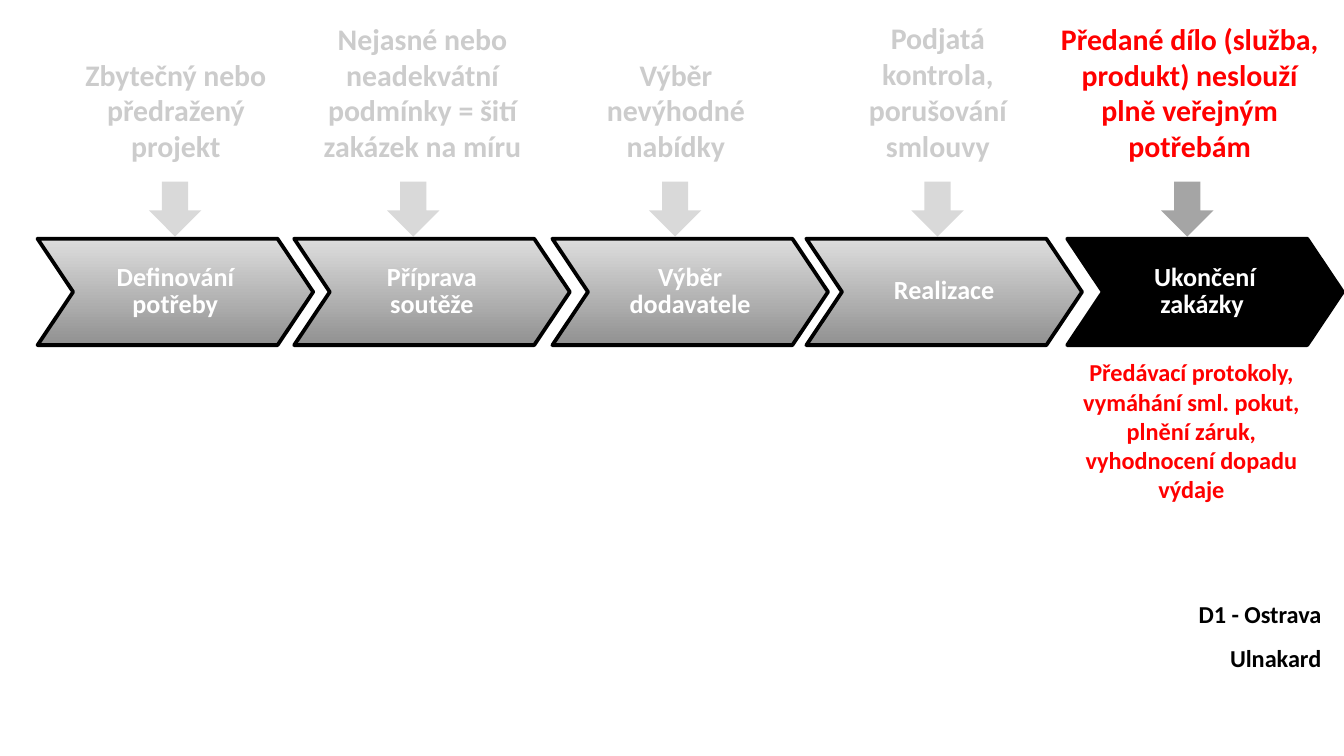
from pptx import Presentation
from pptx.dml.color import RGBColor
from pptx.enum.shapes import MSO_SHAPE
from pptx.enum.text import MSO_ANCHOR, PP_ALIGN
from pptx.util import Cm, Pt

FONT = "Calibri"
BLACK, WHITE, RED = "000000", "FFFFFF", "FF0000"
FADED_TEXT, FADED_ARROW, ACTIVE_ARROW = "CCCCCC", "D9D9D9", "A5A5A5"
GRADIENT = ("DDDDDD", "919191")


def color(value):
    return RGBColor.from_string(value)


def write_text(frame, text, *, size, fill, align=PP_ALIGN.CENTER,
               anchor=MSO_ANCHOR.TOP, spacing=None):
    """Fill a text frame, one paragraph for each line of text."""
    frame.word_wrap = True
    frame.vertical_anchor = anchor
    for index, line in enumerate(text.split("\n")):
        paragraph = frame.add_paragraph() if index else frame.paragraphs[0]
        paragraph.alignment = align
        if spacing:
            paragraph.line_spacing = spacing
        run = paragraph.add_run()
        run.text = line
        run.font.name = FONT
        run.font.size = Pt(size)
        run.font.bold = True
        run.font.color.rgb = color(fill)


class ProcessSlide:
    chevron_top, chevron_width, chevron_height = 4.51, 5.21, 2.01
    arrow_top, arrow_width, arrow_height = 3.43, 0.99, 1.04
    box_height = 2.13

    def __init__(self, presentation):
        self.slide = presentation.slides.add_slide(presentation.slide_layouts[6])

    def shape(self, kind, left, top, width, height):
        shape = self.slide.shapes.add_shape(
            kind, Cm(left), Cm(top), Cm(width), Cm(height))
        shape.shadow.inherit = False
        return shape

    def text(self, text, left, top, width, **style):
        box = self.slide.shapes.add_textbox(
            Cm(left), Cm(top), Cm(width), Cm(self.box_height))
        write_text(box.text_frame, text, **style)

    def arrow(self, center, fill):
        shape = self.shape(MSO_SHAPE.DOWN_ARROW, center - self.arrow_width / 2,
                           self.arrow_top, self.arrow_width, self.arrow_height)
        shape.fill.solid()
        shape.fill.fore_color.rgb = color(fill)
        shape.line.fill.background()

    def chevron(self, text, left, active):
        shape = self.shape(MSO_SHAPE.CHEVRON, left, self.chevron_top,
                           self.chevron_width, self.chevron_height)
        shape.adjustments[0] = 0.335
        if active:
            shape.fill.solid()
            shape.fill.fore_color.rgb = color(BLACK)
        else:
            shape.fill.gradient()
            shape.fill.gradient_angle = 270
            for stop, value in zip(shape.fill.gradient_stops, GRADIENT):
                stop.color.rgb = color(value)
        shape.line.color.rgb = color(BLACK)
        shape.line.width = Pt(2)
        write_text(shape.text_frame, text, size=14, fill=WHITE,
                   anchor=MSO_ANCHOR.MIDDLE, spacing=0.85)


# Stage, chevron left, arrow centre, risk, risk left, top and width, anchor
STAGES = [
    ("Definování potřeby", 0.71, 3.31, "Zbytečný nebo předražený projekt",
     1.32, 1.09, 4.01, MSO_ANCHOR.BOTTOM),
    ("Příprava soutěže", 5.56, 7.81,
     "Nejasné nebo neadekvátní podmínky = šití zakázek na míru",
     5.56, 1.09, 4.85, MSO_ANCHOR.BOTTOM),
    ("Výběr dodavatele", 10.44, 12.76, "Výběr nevýhodné nabídky",
     10.77, 1.09, 4.01, MSO_ANCHOR.BOTTOM),
    ("Realizace", 15.24, 17.72, "Podjatá kontrola, porušování smlouvy",
     15.72, 0.25, 4.01, MSO_ANCHOR.TOP),
    ("Ukončení zakázky ", 20.17, 22.44,
     "Předané dílo (služba, produkt) neslouží plně veřejným potřebám",
     19.74, 1.09, 5.49, MSO_ANCHOR.BOTTOM),
]


def main():
    presentation = Presentation()
    presentation.slide_width = Cm(25.4)
    presentation.slide_height = Cm(14.28)
    process = ProcessSlide(presentation)

    # Stages with their risks; the last one is highlighted
    for stage, left, center, risk, risk_left, risk_top, width, anchor in STAGES:
        active = stage == STAGES[-1][0]
        process.text(risk, risk_left, risk_top, width, size=16,
                     fill=RED if active else FADED_TEXT, anchor=anchor)
        process.arrow(center, ACTIVE_ARROW if active else FADED_ARROW)
        process.chevron(stage, left, active)

    # Controls for the highlighted stage
    process.text("Předávací protokoly, vymáhání sml. pokut, plnění záruk, "
                 "vyhodnocení dopadu výdaje", 19.91, 6.63, 5.21,
                 size=13, fill=RED)

    # Example cases
    process.text("D1 - Ostrava\nUlnakard", 15.95, 10.92, 9.27, size=13,
                 fill=BLACK, align=PP_ALIGN.RIGHT, spacing=1.5)

    presentation.save("out.pptx")


if __name__ == "__main__":
    main()
